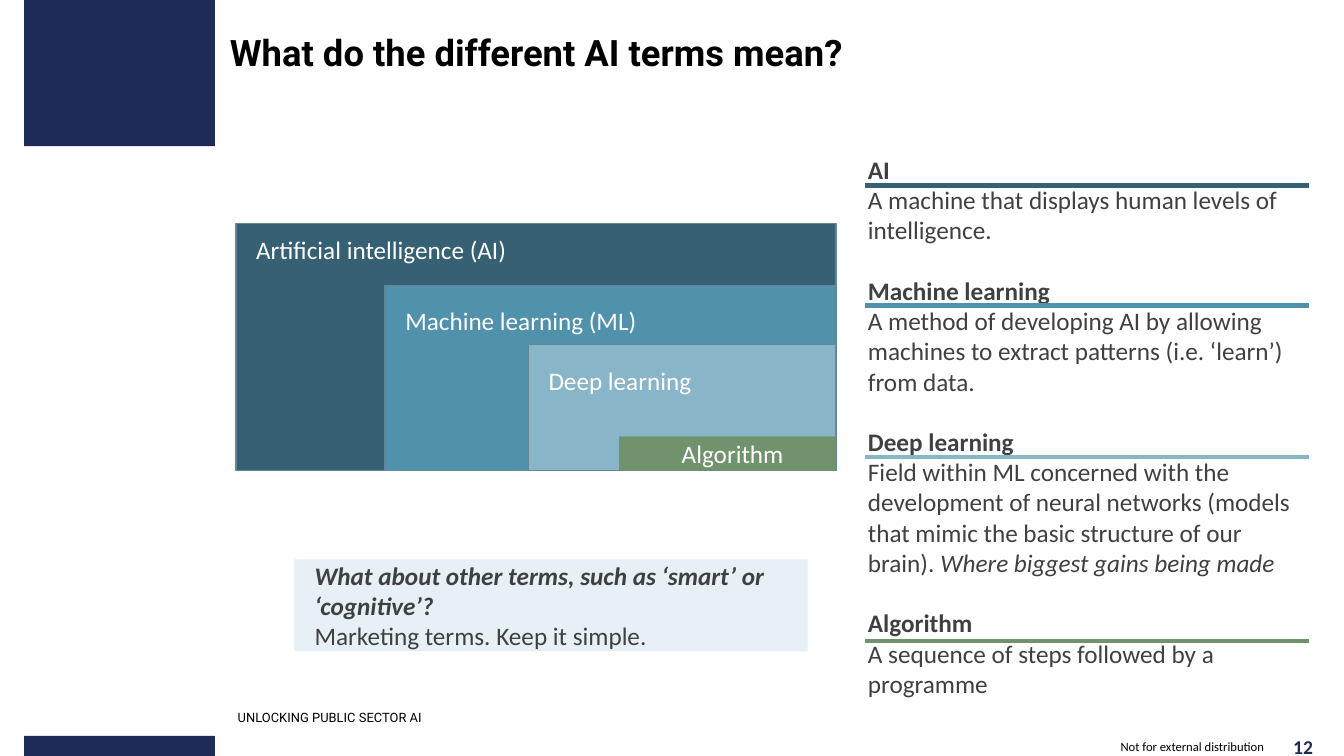
import pptx
import pptx.dml.color
import pptx.enum.shapes
import pptx.enum.text
import pptx.util
from pptx.util import Inches

COLOURS = {
    "navy": "1E2B58",
    "ai": "366073",
    "learning": "5091AC",
    "deep": "89B5C8",
    "algorithm": "70926D",
    "edge": "658694",
    "pale": "E7F0F4",
    "grey": "404040",
    "black": "000000",
    "white": "FFFFFF",
}
TOP = pptx.enum.text.MSO_ANCHOR.TOP
MIDDLE = pptx.enum.text.MSO_ANCHOR.MIDDLE
LEFT = pptx.enum.text.PP_ALIGN.LEFT
CENTER = pptx.enum.text.PP_ALIGN.CENTER
LINE_HEIGHT = 21.6


def colour(name):
    return pptx.dml.color.RGBColor.from_string(COLOURS[name])


def set_frame(shape, insets, anchor):
    frame = shape.text_frame
    frame.word_wrap = True
    frame.vertical_anchor = anchor
    frame.margin_left, frame.margin_top, frame.margin_right, frame.margin_bottom = map(Inches, insets)
    return frame


def add_span(para, text, size, tint, bold=False, italic=False, face="Calibri"):
    span = para.add_run()
    span.text = text
    span.font.name = face
    span.font.size = pptx.util.Pt(size)
    span.font.bold = bold
    span.font.italic = italic
    span.font.color.rgb = colour(tint)


def add_label(page, place, text, size, tint, bold=False, face="Calibri",
              insets=(0.1, 0.05, 0.1, 0.05), anchor=TOP, align=LEFT):
    box = page.shapes.add_textbox(*map(Inches, place))
    para = set_frame(box, insets, anchor).paragraphs[0]
    para.alignment = align
    add_span(para, text, size, tint, bold, face=face)


def add_block(page, place, fill, edge=None):
    block = page.shapes.add_shape(pptx.enum.shapes.MSO_SHAPE.RECTANGLE, *map(Inches, place))
    block.shadow.inherit = False
    block.fill.solid()
    block.fill.fore_color.rgb = colour(fill)
    if edge:
        block.line.color.rgb = colour(edge)
        block.line.width = pptx.util.Pt(1)
    else:
        block.line.fill.background()
    return block


def add_layer(page, place, fill, text, inset_top, edge="edge", anchor=TOP, align=LEFT):
    block = add_block(page, place, fill, edge)
    para = set_frame(block, (0.2, inset_top, 0.1, 0.05), anchor).paragraphs[0]
    para.alignment = align
    add_span(para, text, 18, "white")


def add_rule(page, top, tint):
    rule = page.shapes.add_connector(
        pptx.enum.shapes.MSO_CONNECTOR.STRAIGHT,
        Inches(8.58), Inches(top), Inches(12.98), Inches(top))
    rule.line.color.rgb = colour(tint)
    rule.line.width = pptx.util.Pt(3)
    rule._element.spPr.append(pptx.oxml.parse_xml(
        '<a:effectLst xmlns:a="http://schemas.openxmlformats.org/drawingml/2006/main"/>'))


def add_definitions(page, definitions):
    box = page.shapes.add_textbox(Inches(8.51), Inches(1.48), Inches(4.58), Inches(4.88))
    frame = set_frame(box, (0.1, 0.05, 0.1, 0.05), TOP)
    for index, (term, meaning, remark, top, tint) in enumerate(definitions):
        heading = frame.add_paragraph() if index else frame.paragraphs[0]
        if index:
            heading.space_before = pptx.util.Pt(LINE_HEIGHT)
        add_span(heading, term, 18, "grey", bold=True)
        body = frame.add_paragraph()
        add_span(body, meaning, 18, "grey")
        if remark:
            add_span(body, remark, 18, "grey", italic=True)
        add_rule(page, top, tint)


def add_callout(page, question, answer):
    block = add_block(page, (2.92, 5.55, 5.09, 0.91), "pale")
    frame = set_frame(block, (0.2, 0.1, 0.1, 0.1), MIDDLE)
    frame.paragraphs[0].alignment = LEFT
    add_span(frame.paragraphs[0], question, 18, "grey", bold=True, italic=True)
    reply = frame.add_paragraph()
    reply.alignment = LEFT
    add_span(reply, answer, 18, "grey")


def main():
    deck = pptx.Presentation()
    deck.slide_width = Inches(13.33)
    deck.slide_height = Inches(7.5)
    page = deck.slides.add_slide(deck.slide_layouts[6])

    for top, height in ((0, 1.45), (7.3, 0.2)):
        add_block(page, (0.24, top, 1.89, height), "navy")
    add_label(page, (2.28, 0.3, 8.81, 0.92), "What do the different AI terms mean?",
              26, "black", bold=True, face="Roboto", insets=(0, 0, 0.1, 0))
    add_label(page, (2.26, 6.99, 2.74, 0.22), "UNLOCKING PUBLIC SECTOR AI",
              9.2, "black", face="Roboto")

    add_layer(page, (2.34, 2.22, 5.95, 2.45), "ai", "Artificial intelligence (AI)", 0.1)
    add_layer(page, (3.82, 2.83, 4.47, 1.84), "learning", "Machine learning (ML)", 0.2)
    add_layer(page, (5.24, 3.42, 3.05, 1.25), "deep", "Deep learning", 0.2)
    add_layer(page, (6.14, 4.33, 2.15, 0.34), "algorithm", "Algorithm", 0.05,
              edge=None, anchor=MIDDLE, align=CENTER)

    add_definitions(page, (
        ("AI", "A machine that displays human levels of intelligence.", "", 1.84, "ai"),
        ("Machine learning",
         "A method of developing AI by allowing machines to extract patterns (i.e. ‘learn’) from data.",
         "", 3.03, "learning"),
        ("Deep learning",
         "Field within ML concerned with the development of neural networks "
         "(models that mimic the basic structure of our brain). ",
         "Where biggest gains being made", 4.53, "deep"),
        ("Algorithm", "A sequence of steps followed by a programme", "", 6.36, "algorithm"),
    ))
    add_callout(page, "What about other terms, such as ‘smart’ or ‘cognitive’?",
                "Marketing terms. Keep it simple.")

    add_label(page, (12.77, 7.26, 0.31, 0.3), "12", 14, "navy", bold=True,
              insets=(0, 0, 0, 0), anchor=MIDDLE, align=CENTER)
    add_label(page, (10.98, 7.34, 1.69, 0.14), "Not for external distribution", 9, "black",
              anchor=MIDDLE, align=CENTER)
    deck.save("out.pptx")


if __name__ == "__main__":
    main()
